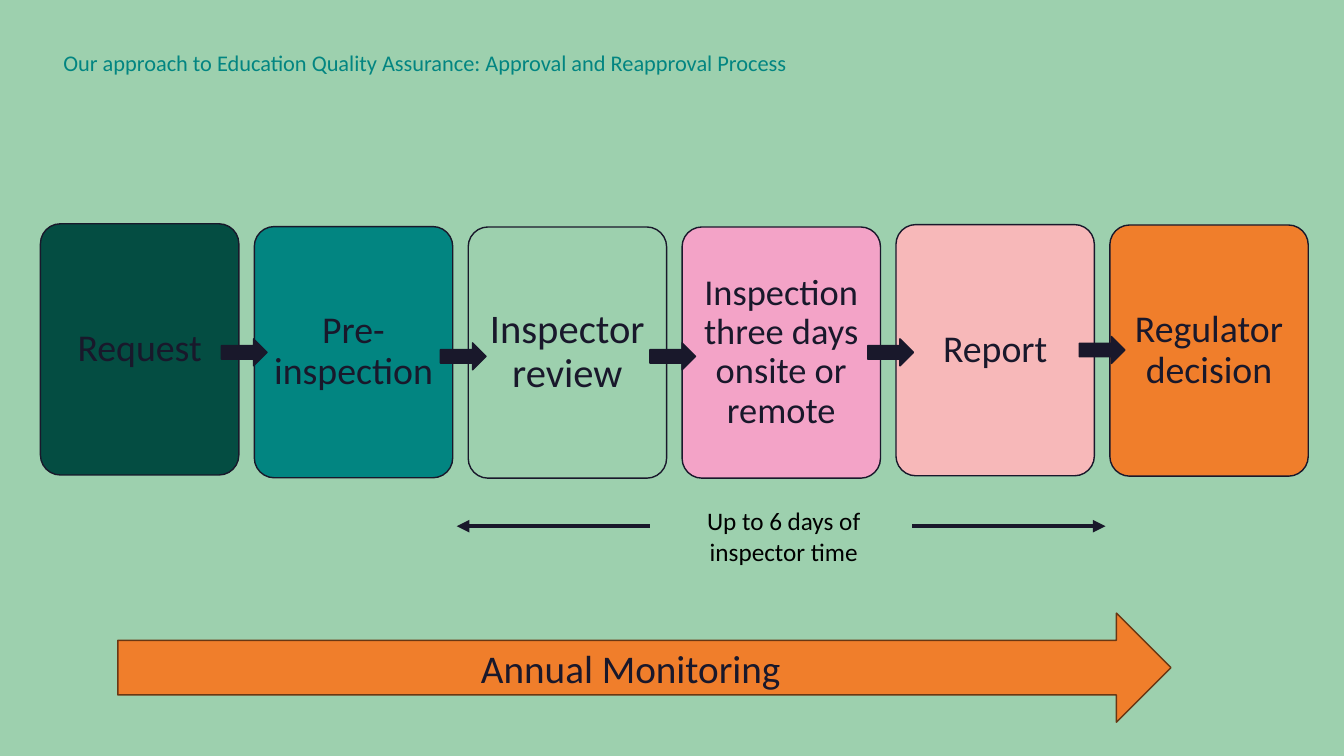
from lxml import etree
from pptx import Presentation
from pptx.dml.color import RGBColor
from pptx.enum.shapes import MSO_CONNECTOR, MSO_SHAPE
from pptx.enum.text import MSO_ANCHOR, PP_ALIGN
from pptx.oxml.ns import qn
from pptx.util import Cm, Pt

ROUNDED, RIGHT_ARROW = MSO_SHAPE.ROUNDED_RECTANGLE, MSO_SHAPE.RIGHT_ARROW
STRAIGHT = MSO_CONNECTOR.STRAIGHT
LEFT, CENTER = PP_ALIGN.LEFT, PP_ALIGN.CENTER
TOP, MIDDLE = MSO_ANCHOR.TOP, MSO_ANCHOR.MIDDLE

MINT = RGBColor(0x9D, 0xD0, 0xAE)
INK = RGBColor(0x19, 0x18, 0x2B)
BLACK = RGBColor(0, 0, 0)
FOREST = RGBColor(0x04, 0x4D, 0x42)
TEAL = RGBColor(0x02, 0x85, 0x81)
PINK = RGBColor(0xF3, 0xA3, 0xC7)
BLUSH = RGBColor(0xF7, 0xB8, 0xB9)
ORANGE = RGBColor(0xF0, 0x7E, 0x2B)
BROWN = RGBColor(0x69, 0x37, 0x13)


def write(shape, text, size, color=INK, align=CENTER, anchor=MIDDLE, spacing=1.0, inset=None):
    frame = shape.text_frame
    frame.word_wrap = True
    frame.vertical_anchor = anchor
    if inset is not None:
        frame.margin_left = frame.margin_right = inset
        frame.margin_top = frame.margin_bottom = inset
    paragraph = frame.paragraphs[0]
    paragraph.alignment = align
    paragraph.line_spacing = spacing
    run = paragraph.add_run()
    run.text = text
    run.font.name = "Calibri"
    run.font.size = Pt(size)
    run.font.color.rgb = color


def add_filled(kind, left, top, width, height, fill, outline=INK):
    shape = slide.shapes.add_shape(kind, Cm(left), Cm(top), Cm(width), Cm(height))
    shape.shadow.inherit = False
    shape.fill.solid()
    shape.fill.fore_color.rgb = fill
    shape.line.color.rgb = outline
    shape.line.width = Pt(1)
    return shape


prs = Presentation()
prs.slide_width, prs.slide_height = Cm(33.87), Cm(19.05)
slide = prs.slides.add_slide(prs.slide_layouts[6])
slide.background.fill.solid()
slide.background.fill.fore_color.rgb = MINT

heading = slide.shapes.add_textbox(Cm(1.35), Cm(1.19), Cm(20), Cm(1.8))
write(heading, "Our approach to Education Quality Assurance: Approval and Reapproval Process",
      16, TEAL, align=LEFT, anchor=TOP, spacing=0.9)

# Process stages: label, text size, fill, top
stages = [
    ("Request", 27, FOREST, 5.64),
    ("Pre-inspection", 27, TEAL, 5.71),
    ("Inspector review", 29, MINT, 5.72),
    ("Inspection three days onsite or remote", 26, PINK, 5.72),
    ("Report", 27, BLUSH, 5.66),
    ("Regulator decision", 27, ORANGE, 5.67),
]
for index, (label, size, fill, top) in enumerate(stages):
    stage = add_filled(ROUNDED, 1.02 + 5.39 * index, top, 5, 6.33, fill)
    stage.adjustments[0] = 0.1
    write(stage, label, size, spacing=0.9, inset=Cm(0.28))

# Arrows leading from each stage to the next
for left, top in [(5.58, 8.54), (11.1, 8.64), (16.38, 8.64), (21.87, 8.54), (27.2, 8.48)]:
    add_filled(RIGHT_ARROW, left, top, 1.15, 0.68, INK)

# Span of inspector time
span_label = slide.shapes.add_textbox(Cm(16.79), Cm(12.62), Cm(5.92), Cm(1.8))
write(span_label, "Up to 6 days of inspector time", 18, BLACK, anchor=TOP)
for start, end in [(16.38, 11.51), (22.99, 27.86)]:
    span = slide.shapes.add_connector(STRAIGHT, Cm(start), Cm(13.26), Cm(end), Cm(13.26))
    span.line.color.rgb = INK
    span.line.width = Pt(3)
    etree.SubElement(span.line._get_or_add_ln(), qn("a:tailEnd"), type="triangle")
    etree.SubElement(span._element.spPr, qn("a:effectLst"))

monitoring = add_filled(RIGHT_ARROW, 2.97, 15.45, 26.54, 2.75, ORANGE, BROWN)
write(monitoring, "Annual Monitoring", 28)

prs.save("out.pptx")
